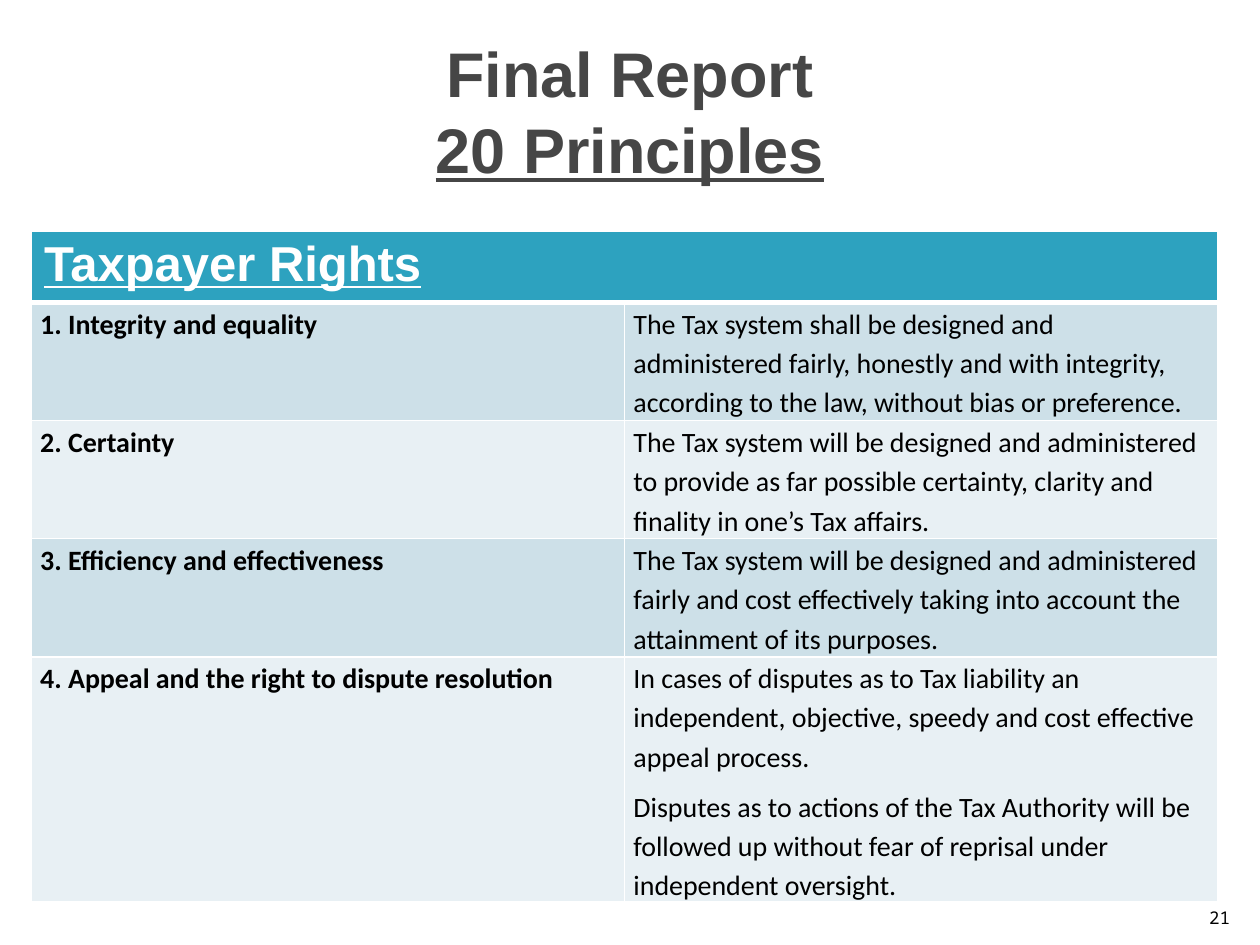
import pptx
import pptx.util
import pptx.dml.color
import pptx.enum.text
import pptx.oxml.ns
import lxml.etree

Pt = pptx.util.Pt
PP_ALIGN = pptx.enum.text.PP_ALIGN
MSO_ANCHOR = pptx.enum.text.MSO_ANCHOR

TITLE = ["Final Report", "20 Principles"]
HEADING = "Taxpayer Rights"
PRINCIPLES = [
    ("1. Integrity and equality", [
        "The Tax system shall be designed and administered fairly, honestly and with "
        "integrity, according to the law, without bias or preference."]),
    ("2. Certainty", [
        "The Tax system will be designed and administered to provide as far possible "
        "certainty, clarity and finality in one’s Tax affairs."]),
    ("3. Efficiency and effectiveness", [
        "The Tax system will be designed and administered fairly and cost effectively "
        "taking into account the attainment of its purposes."]),
    ("4. Appeal and the right to dispute resolution", [
        "In cases of disputes as to Tax liability an independent, objective, speedy and "
        "cost effective appeal process.",
        "Disputes as to actions of the Tax Authority will be followed up without fear of "
        "reprisal under independent oversight."]),
]
PAGE_NUMBER = "21"

HEADER_FILL = "2DA2BF"
BAND_FILLS = ["CDE0E8", "E8F0F4"]
WHITE, BLACK, GREY = "FFFFFF", "000000", "464646"
ROW_HEIGHTS = [37.5, 67.5, 67.5, 67.5, 140]
COLUMN_WIDTH = 339


def rgb(value):
    return pptx.dml.color.RGBColor.from_string(value)


def add_text(paragraph, text, font="Calibri", size=16, color=BLACK, bold=False,
             underline=False, align=None, line_spacing=None):
    run = paragraph.add_run()
    run.text = text
    run.font.name = font
    run.font.size = Pt(size)
    run.font.color.rgb = rgb(color)
    run.font.bold = bold
    run.font.underline = underline
    if align is not None:
        paragraph.alignment = align
    if line_spacing is not None:
        paragraph.line_spacing = line_spacing


def set_borders(cell, bottom=1):
    """Draw white cell borders; bottom is the lower line's width in points."""
    properties = cell._tc.get_or_add_tcPr()
    widths = {"lnL": 1, "lnR": 1, "lnT": 1, "lnB": bottom}
    for index, (tag, width) in enumerate(widths.items()):
        line = lxml.etree.Element(pptx.oxml.ns.qn(f"a:{tag}"), w=str(Pt(width)))
        fill = lxml.etree.SubElement(line, pptx.oxml.ns.qn("a:solidFill"))
        lxml.etree.SubElement(fill, pptx.oxml.ns.qn("a:srgbClr"), val=WHITE)
        properties.insert(index, line)


def fill_cell(cell, color):
    cell.fill.solid()
    cell.fill.fore_color.rgb = rgb(color)


def add_title(slide):
    title = slide.shapes.title
    title.left, title.top, title.width, title.height = Pt(36), Pt(18), Pt(648), Pt(90)
    title.text_frame.auto_size = pptx.enum.text.MSO_AUTO_SIZE.NONE
    title.text_frame.vertical_anchor = MSO_ANCHOR.MIDDLE
    paragraph = title.text_frame.paragraphs[0]
    style = dict(font="Arial", size=36, color=GREY, bold=True, align=PP_ALIGN.CENTER)
    add_text(paragraph, TITLE[0], **style)
    paragraph.add_line_break()
    add_text(paragraph, TITLE[1], underline=True, **style)


def add_principles_table(slide):
    table = slide.shapes.add_table(
        len(ROW_HEIGHTS), 2, Pt(18), Pt(132),
        Pt(2 * COLUMN_WIDTH), Pt(sum(ROW_HEIGHTS))).table
    for column in table.columns:
        column.width = Pt(COLUMN_WIDTH)
    for row, height in zip(table.rows, ROW_HEIGHTS):
        row.height = Pt(height)

    header = table.cell(0, 0)
    header.merge(table.cell(0, 1))
    add_text(header.text_frame.paragraphs[0], HEADING, font="Arial", size=28,
             color=WHITE, bold=True, underline=True)
    for cell in table.rows[0].cells:
        fill_cell(cell, HEADER_FILL)
        set_borders(cell, bottom=3)

    for row_index, (name, statements) in enumerate(PRINCIPLES, start=1):
        for column_index, texts in enumerate([[name], statements]):
            cell = table.cell(row_index, column_index)
            cell.margin_left = cell.margin_right = Pt(5)
            cell.margin_top = cell.margin_bottom = 0
            fill_cell(cell, BAND_FILLS[(row_index - 1) % 2])
            set_borders(cell)
            frame = cell.text_frame
            for index, text in enumerate(texts):
                paragraph = frame.add_paragraph() if index else frame.paragraphs[0]
                add_text(paragraph, text, bold=column_index == 0, line_spacing=1.15)
                if index < len(texts) - 1:
                    paragraph.space_after = Pt(6)


def add_page_number(slide):
    box = slide.shapes.add_textbox(Pt(681), Pt(505), Pt(29), Pt(29))
    box.text_frame.word_wrap = True
    box.text_frame.vertical_anchor = MSO_ANCHOR.BOTTOM
    add_text(box.text_frame.paragraphs[0], PAGE_NUMBER, font="Noto Sans Mono", size=10,
             align=PP_ALIGN.RIGHT)


def main():
    presentation = pptx.Presentation()
    presentation.slide_width, presentation.slide_height = Pt(720), Pt(540)
    slide = presentation.slides.add_slide(presentation.slide_layouts[5])
    add_page_number(slide)
    add_title(slide)
    add_principles_table(slide)
    presentation.save("out.pptx")


if __name__ == "__main__":
    main()
